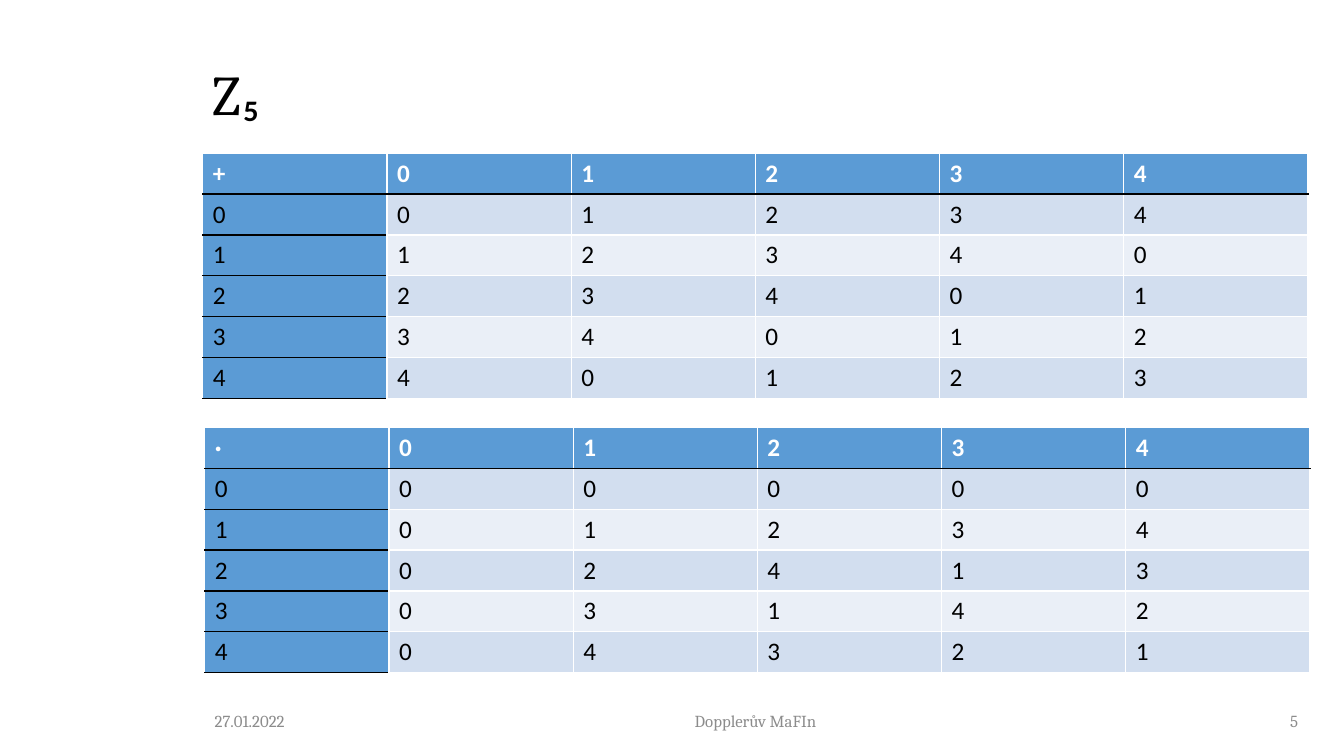
"""Build a slide with the addition and multiplication tables of Z₅."""
from dataclasses import dataclass

from lxml import etree
from pptx import Presentation
from pptx import util as u
from pptx.dml.color import RGBColor
from pptx.enum import text
from pptx.oxml import ns


@dataclass(frozen=True)
class Theme:
    """Colours, fonts and type sizes of the slide."""
    head: str = "5B9BD5"
    odd: str = "D2DEEF"
    even: str = "EAEFF7"
    white: str = "FFFFFF"
    black: str = "000000"
    grey: str = "8C8C8C"
    serif: str = "Cambria"
    sans: str = "Calibri"
    title: int = 40
    body: int = 18
    small: int = 12


class Deck:
    """Holds the theme and the current slide."""

    def __init__(self, theme):
        """Open a wide deck with one title-only slide."""
        self.theme = theme
        self.prs = Presentation()
        self.put(self.prs, slide_width=u.Inches(13.33), slide_height=u.Inches(7.5))
        self.slide = self.prs.slides.add_slide(self.prs.slide_layouts[5])

    def put(self, item, **vals):
        """Set each named value on an item."""
        for name, val in vals.items():
            setattr(item, name, val)

    def place(self, shape, box):
        """Move a shape to a box given in centimetres."""
        names = ("left", "top", "width", "height")
        self.put(shape, **dict(zip(names, map(u.Cm, box))))

    def run(self, para, words, face, size, tint, bold=False):
        """Add one formatted run."""
        run = para.add_run()
        run.text = words
        self.put(run.font, name=face, size=u.Pt(size), bold=bold)
        run.font.color.rgb = RGBColor.from_string(tint)

    def frame(self, shape, align):
        """Set up a text frame and return its first paragraph."""
        frame = shape.text_frame
        self.put(frame, word_wrap=True, auto_size=text.MSO_AUTO_SIZE.NONE,
                 vertical_anchor=text.MSO_ANCHOR.MIDDLE)
        para = frame.paragraphs[0]
        para.alignment = align
        return para

    def title(self, parts, box):
        """Fill the title from pairs of words and font."""
        shape = self.slide.shapes.title
        self.place(shape, box)
        para = self.frame(shape, text.PP_ALIGN.LEFT)
        para.line_spacing = 0.9
        for words, face in parts:
            self.run(para, words, face, self.theme.title, self.theme.black)

    def note(self, words, box, align):
        """Add a small grey footer text."""
        shape = self.slide.shapes.add_textbox(*map(u.Cm, box))
        para = self.frame(shape, align)
        self.run(para, words, self.theme.serif, self.theme.small, self.theme.grey)

    def edge(self, cell, sides):
        """Draw the cell borders from a dict of side and colour."""
        props = cell._tc.get_or_add_tcPr()
        for side, tint in sides.items():
            line = etree.SubElement(props, ns.qn(f"a:ln{side}"), w=str(u.Pt(1)))
            fill = etree.SubElement(line, ns.qn("a:solidFill"))
            etree.SubElement(fill, ns.qn("a:srgbClr"), val=tint)

    def cell(self, cell, words, row, col):
        """Format one cell by its row and column."""
        look = self.theme
        top = look.black if row == 1 or (row and not col) else look.white
        low = look.white if row and col else look.black
        self.edge(cell, {"L": look.white, "R": look.white, "T": top, "B": low})
        band = look.odd if row % 2 else look.even
        cell.fill.solid()
        cell.fill.fore_color.rgb = RGBColor.from_string(band if row and col else look.head)
        tint = look.black if row else look.white
        self.run(cell.text_frame.paragraphs[0], words, look.sans, look.body, tint, not row)

    def table(self, sign, rule, size, box):
        """Add the table of an operation on the numbers below size."""
        nums = range(size)
        rows = [[sign, *nums]] + [[a, *(rule(a, b) % size for b in nums)] for a in nums]
        count = len(rows)
        grid = self.slide.shapes.add_table(count, count, *map(u.Cm, box)).table
        for r, row in enumerate(rows):
            for c, val in enumerate(row):
                self.cell(grid.cell(r, c), str(val), r, c)


def main():
    """Build and save the slide."""
    look = Theme()
    deck = Deck(look)
    side = text.PP_ALIGN
    deck.title([("Z", look.serif), ("₅", look.sans)], (5.11, 0.61, 27.84, 3.7))
    deck.table("+", lambda a, b: a + b, 5, (5.11, 3.86, 27.84, 6.18))
    deck.table("·", lambda a, b: a * b, 5, (5.16, 10.77, 27.84, 6.18))
    for words, left, width, align in (
        ("27.01.2022", 5.16, 6.76, side.LEFT),
        ("Dopplerův MaFIn", 14.45, 9.17, side.CENTER),
        ("5", 25.33, 7.62, side.RIGHT),
    ):
        deck.note(words, (left, 17.65, width, 1.02), align)
    deck.prs.save("out.pptx")


if __name__ == "__main__":
    main()
